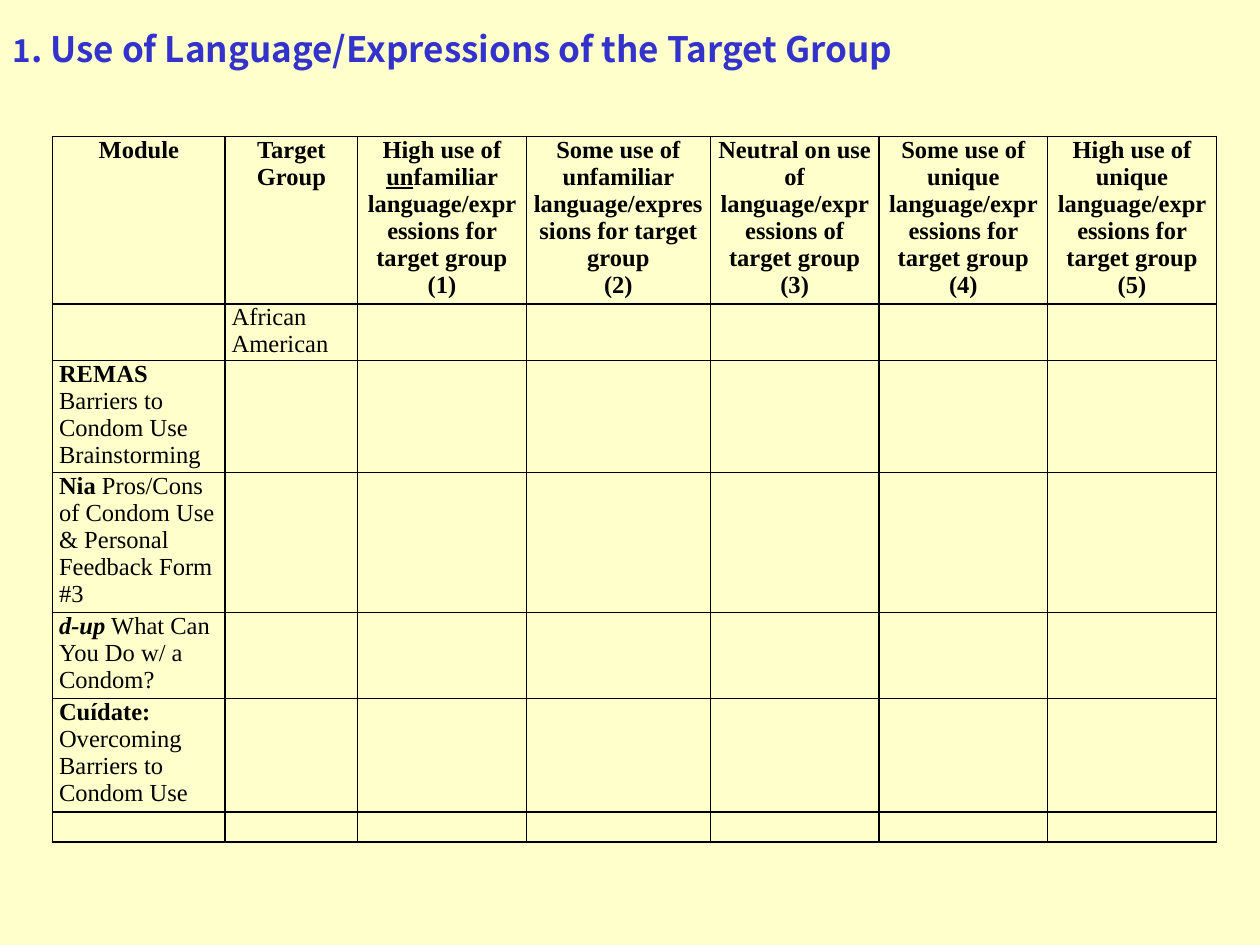
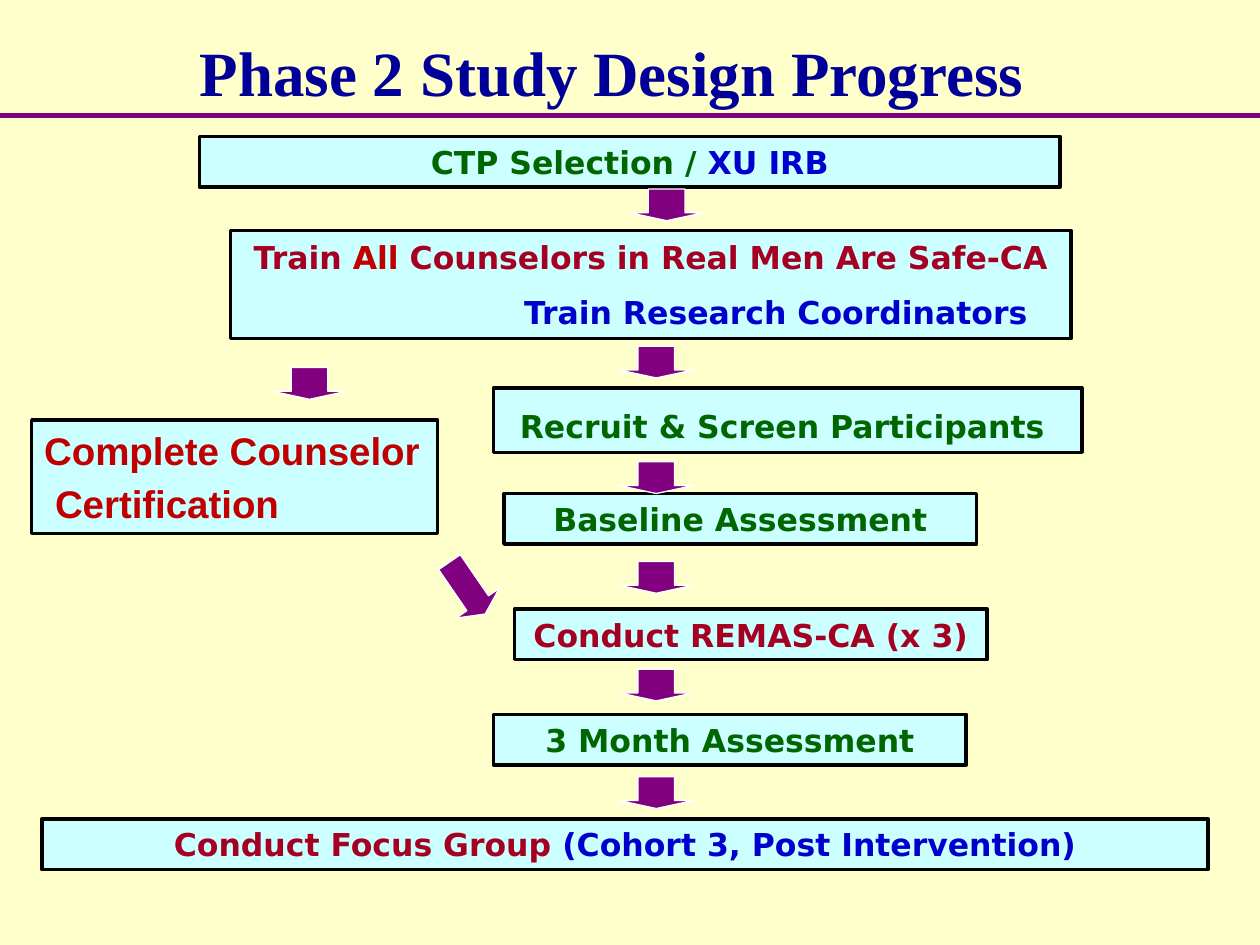
from collections import namedtuple
from dataclasses import dataclass

from lxml import etree
from pptx import Presentation
from pptx.dml.color import RGBColor
from pptx.enum.shapes import MSO_CONNECTOR, MSO_SHAPE
from pptx.enum.text import MSO_ANCHOR, MSO_AUTO_SIZE, PP_ALIGN
from pptx.oxml.ns import qn
from pptx.util import Cm, Pt

CENTER, LEFT = PP_ALIGN.CENTER, PP_ALIGN.LEFT
TOP, MIDDLE, BOTTOM = MSO_ANCHOR.TOP, MSO_ANCHOR.MIDDLE, MSO_ANCHOR.BOTTOM
RECTANGLE, DOWN_ARROW = MSO_SHAPE.RECTANGLE, MSO_SHAPE.DOWN_ARROW
STRAIGHT = MSO_CONNECTOR.STRAIGHT
NO_AUTOFIT = MSO_AUTO_SIZE.NONE
TITLE_ONLY = 5

Box = namedtuple("Box", "left top width height")


@dataclass(frozen=True)
class Theme:
    """Colours, fonts and type sizes shared by the slides."""

    background: str = "FFFFCC"
    black: str = "000000"
    white: str = "FFFFFF"
    heading: str = "3333CC"
    title: str = "000099"
    box_fill: str = "CCFFFF"
    purple: str = "800080"
    green: str = "006600"
    blue: str = "0000CC"
    crimson: str = "A50021"
    red: str = "C00000"
    serif: str = "Times New Roman"
    sans: str = "Arial"
    flow_font: str = "DejaVu Sans"
    heading_font: str = "Noto Sans CJK KR"
    title_size: int = 36
    certification_size: int = 22
    heading_size: int = 20
    flow_size: int = 18
    table_size: int = 14


THEME = Theme()
BOLD, PLAIN = {"bold": True}, {}

COLUMN_WIDTHS = [3.48, 2.67, 3.4, 3.71, 3.4, 3.4, 3.4]
ROW_HEIGHTS = [3.38, 1.14, 2.26, 2.82, 1.73, 2.29, 0.56]
HEADERS = [
    [[("Module", BOLD)]],
    [[("Target Group", BOLD)]],
    [[("High use of ", BOLD), ("un", {"bold": True, "underline": True}),
      ("familiar language/expressions for target group", BOLD)], [("(1)", BOLD)]],
    [[("Some use of unfamiliar language/expressions for target group", BOLD)],
     [("(2)", BOLD)]],
    [[("Neutral on use of language/expressions of target group", BOLD)], [("(3)", BOLD)]],
    [[("Some use of unique language/expressions for target group", BOLD)], [("(4)", BOLD)]],
    [[("High use of unique language/expressions for target group", BOLD)], [("(5)", BOLD)]],
]
BODY_CELLS = {
    (1, 1): [("African American", PLAIN)],
    (2, 0): [("REMAS", BOLD), (" Barriers to Condom Use Brainstorming", PLAIN)],
    (3, 0): [("Nia", BOLD), (" Pros/Cons of Condom Use & Personal Feedback Form #3", PLAIN)],
    (4, 0): [("d-up", {"bold": True, "italic": True}),
             (" What Can You Do w/ a Condom?", PLAIN)],
    (5, 0): [("Cuídate:", BOLD), (" Overcoming Barriers to Condom Use", PLAIN)],
}

FLOW_STEPS = [
    (Box(3.38, 0, 17.35, 1.02),
     [[("CTP Selection / ", THEME.green), ("XU IRB", THEME.blue)]], {}),
    (Box(4.01, 1.9, 16.94, 2.18),
     [[("Train ", THEME.crimson), ("All ", THEME.red),
       ("Counselors in Real Men Are Safe-CA", THEME.crimson)],
      [("Train Research Coordinators", THEME.blue)]], {"indent": 5.04}),
    (Box(9.31, 5.07, 11.86, 1.3),
     [[("Recruit & Screen Participants ", THEME.green)]], {"top_inset": 0.38}),
    (Box(9.52, 7.2, 9.53, 1.02), [[("Baseline Assessment", THEME.green)]], {}),
    (Box(9.73, 9.53, 9.53, 1.02), [[("Conduct REMAS-CA (x 3)", THEME.crimson)]], {}),
    (Box(9.31, 11.65, 9.53, 1.02), [[("3 Month Assessment", THEME.green)]], {}),
    (Box(0.21, 13.76, 23.5, 1.02),
     [[("Conduct Focus Group ", THEME.crimson),
       ("(Cohort 3, Post Intervention)", THEME.blue)]], {}),
    (Box(0, 5.72, 8.18, 2.29),
     [[("Complete Counselor", THEME.red)], [("Certification", THEME.red)]],
     {"indent": 0.22, "align": LEFT, "wrap": False, "gap": 4,
      "font": THEME.sans, "size": THEME.certification_size}),
]
ARROW_WIDTH, ARROW_HEIGHT = 1.48, 0.64
ARROW_POSITIONS = [(12.06, 1.06), (4.86, 4.66)] + [
    (11.85, 4.23 + 2.17 * index + (0.16 if index == 1 else 0)) for index in range(5)
]
CERTIFICATION_ARROW = Box(8.25, 8.47, 1.06, 1.27)


def color(value):
    """Turn a hexadecimal string into a colour."""
    return RGBColor.from_string(value)


def lengths(box):
    """Turn a box in centimetres into four lengths."""
    return [Cm(value) for value in box]


def within(region, box):
    """Move a box from region coordinates to slide coordinates."""
    return Box(region.left + box.left, region.top + box.top, box.width, box.height)


def add_text(paragraph, text, *, font, size, ink, bold=False, italic=False, underline=False):
    """Add one formatted run to a paragraph."""
    run = paragraph.add_run()
    run.text = text
    run.font.name = font
    run.font.size = Pt(size)
    run.font.color.rgb = color(ink)
    run.font.bold, run.font.italic, run.font.underline = bold, italic, underline


def get_paragraph(text_frame, index):
    """Return the first paragraph, or add a further one."""
    return text_frame.add_paragraph() if index else text_frame.paragraphs[0]


def place_title(slide, box, runs, anchor, align):
    """Place and fill the title placeholder."""
    title = slide.shapes.title
    title.left, title.top, title.width, title.height = lengths(box)
    text_frame = title.text_frame
    text_frame.auto_size = NO_AUTOFIT
    text_frame.word_wrap = True
    text_frame.vertical_anchor = anchor
    paragraph = text_frame.paragraphs[0]
    paragraph.alignment = align
    for text, style in runs:
        add_text(paragraph, text, bold=True, **style)


def format_cell(cell, paragraphs, align):
    """Set the borders, margins and text of a table cell."""
    properties = cell._tc.get_or_add_tcPr()
    for side in ("lnL", "lnR", "lnT", "lnB"):
        line = etree.SubElement(properties, qn("a:" + side), w=str(Pt(1)))
        fill = etree.SubElement(line, qn("a:solidFill"))
        etree.SubElement(fill, qn("a:srgbClr"), val=THEME.black)
    cell.fill.background()
    cell.margin_left = cell.margin_right = Cm(0.13)
    cell.margin_top = cell.margin_bottom = 0
    cell.vertical_anchor = TOP
    for index, runs in enumerate(paragraphs):
        paragraph = get_paragraph(cell.text_frame, index)
        paragraph.alignment = align
        for text, style in runs:
            add_text(paragraph, text, font=THEME.serif, size=THEME.table_size,
                     ink=THEME.black, **style)
    if not paragraphs:
        etree.SubElement(cell.text_frame.paragraphs[0]._p, qn("a:endParaRPr"),
                         sz=str(THEME.table_size * 100))


def add_rating_table(slide, box):
    """Add the language rating table."""
    table = slide.shapes.add_table(
        len(ROW_HEIGHTS), len(COLUMN_WIDTHS), *lengths(box)).table
    table.first_row = table.horz_banding = False
    for column, width in zip(table.columns, COLUMN_WIDTHS):
        column.width = Cm(width)
    for row, height in zip(table.rows, ROW_HEIGHTS):
        row.height = Cm(height)
    for row_index in range(len(ROW_HEIGHTS)):
        for column_index in range(len(COLUMN_WIDTHS)):
            cell = table.cell(row_index, column_index)
            if row_index == 0:
                format_cell(cell, HEADERS[column_index], CENTER)
            else:
                runs = BODY_CELLS.get((row_index, column_index))
                format_cell(cell, [runs] if runs else [], LEFT)


def add_filled_shape(slide, kind, box, fill, line, line_width):
    """Add a preset shape with its fill and outline."""
    shape = slide.shapes.add_shape(kind, *lengths(box))
    shape.shadow.inherit = False
    shape.fill.solid()
    shape.fill.fore_color.rgb = color(fill)
    shape.line.color.rgb = color(line)
    shape.line.width = Pt(line_width)
    return shape


def add_step(slide, box, paragraphs, indent=0, top_inset=None, align=CENTER, wrap=True,
             gap=10, font=THEME.flow_font, size=THEME.flow_size):
    """Add one step of the study flow."""
    shape = add_filled_shape(slide, RECTANGLE, box, THEME.box_fill, THEME.black, 2)
    text_frame = shape.text_frame
    text_frame.word_wrap = wrap
    text_frame.vertical_anchor = MIDDLE
    if top_inset is not None:
        text_frame.vertical_anchor = TOP
        text_frame.margin_top = Cm(top_inset)
    for index, runs in enumerate(paragraphs):
        paragraph = get_paragraph(text_frame, index)
        paragraph.alignment = align
        if index:
            paragraph.space_before = Pt(gap)
            paragraph._p.get_or_add_pPr().set("marL", str(Cm(indent)))
        for text, ink in runs:
            add_text(paragraph, text, font=font, size=size, ink=ink, bold=True)


def add_arrow(slide, box, rotation=0):
    """Add a block arrow that points down before it is rotated."""
    arrow = add_filled_shape(slide, DOWN_ARROW, box, THEME.purple, THEME.white, 0.75)
    arrow.adjustments[0], arrow.adjustments[1] = 0.5, 0.25
    arrow.rotation = rotation


def add_title_rule(slide, box):
    """Add the rule along the top of a box."""
    rule = slide.shapes.add_connector(
        STRAIGHT, Cm(box.left), Cm(box.top), Cm(box.left + box.width), Cm(box.top))
    rule.line.color.rgb = color(THEME.purple)
    rule.line.width = Pt(3)
    etree.SubElement(rule._element.spPr, qn("a:effectLst"))


def add_study_flow(slide, region):
    """Add the steps and arrows of the study flow."""
    for box, paragraphs, options in FLOW_STEPS:
        add_step(slide, within(region, box), paragraphs, **options)
    for left, top in ARROW_POSITIONS:
        add_arrow(slide, within(region, Box(left, top, ARROW_WIDTH, ARROW_HEIGHT)))
    add_arrow(slide, within(region, CERTIFICATION_ARROW), rotation=-34.5)


def build_language_slide(slide):
    """Build the slide with the rating table."""
    style = {"font": THEME.heading_font, "ink": THEME.heading}
    runs = [("1", {"size": THEME.flow_size, **style}),
            (". Use of Language/Expressions of the Target Group",
             {"size": THEME.heading_size, **style})]
    place_title(slide, Box(0, 0.43, 20.32, 2.2), runs, TOP, LEFT)
    add_rating_table(slide, Box(1.06, 2.75, sum(COLUMN_WIDTHS), sum(ROW_HEIGHTS)))


def build_progress_slide(slide):
    """Build the slide with the study flow."""
    style = {"font": THEME.serif, "size": THEME.title_size, "ink": THEME.title}
    place_title(slide, Box(0.64, 0.43, 23.7, 1.9),
                [("Phase 2 Study Design Progress ", style)], BOTTOM, CENTER)
    add_title_rule(slide, Box(0, 2.33, 25.4, 0))
    add_study_flow(slide, Box(0.64, 2.75, 23.7, 14.78))


def main():
    """Build and save the presentation."""
    presentation = Presentation()
    presentation.slide_width, presentation.slide_height = Cm(25.4), Cm(19.05)
    background = presentation.slide_master.background.fill
    background.solid()
    background.fore_color.rgb = color(THEME.background)
    for build in (build_language_slide, build_progress_slide):
        build(presentation.slides.add_slide(presentation.slide_layouts[TITLE_ONLY]))
    presentation.save("out.pptx")


if __name__ == "__main__":
    main()
